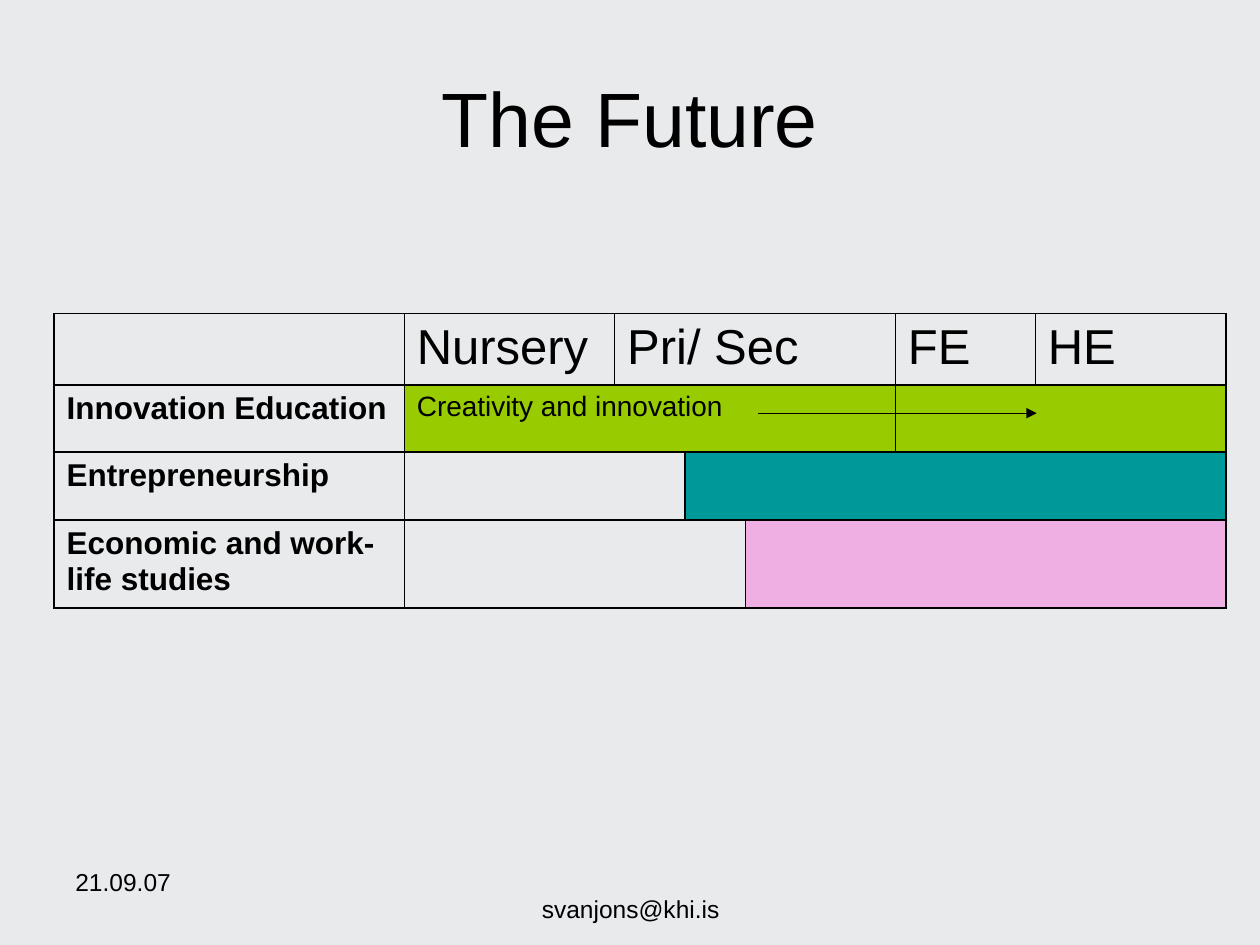
from lxml.etree import SubElement
from pptx import Presentation
from pptx.dml.color import RGBColor
from pptx.enum.shapes import MSO_CONNECTOR as CONN
from pptx.enum.text import MSO_ANCHOR as ANCHOR, PP_ALIGN as ALIGN
from pptx.oxml.ns import qn
from pptx.util import Cm, Pt


def rgb(value):
    return RGBColor.from_string(value)


def write(tf, text, size, bold=False, align=ALIGN.LEFT):
    tf.word_wrap = True
    p = tf.paragraphs[0]
    p.text = text
    p.alignment = align
    p.font.name = "Arial"
    p.font.size = Pt(size)
    p.font.bold = bold
    p.font.color.rgb = rgb("000000")


prs = Presentation()
prs.slide_width, prs.slide_height = Cm(25.4), Cm(19.05)
s = prs.slides.add_slide(prs.slide_layouts[6])
s.background.fill.solid()
s.background.fill.fore_color.rgb = rgb("E8EAEC")

texts = [
    ("21.09.07", 14, ALIGN.LEFT, ANCHOR.TOP, (1.27, 17.35, 5.92, 1.32)),
    ("svanjons@khi.is", 14, ALIGN.CENTER, ANCHOR.TOP, (8.69, 17.89, 8.05, 0.8)),
    ("The Future", 44, ALIGN.CENTER, ANCHOR.MIDDLE, (1.27, 0.76, 22.86, 3.18)),
]
for text, size, align, anchor, box in texts:
    tf = s.shapes.add_textbox(*map(Cm, box)).text_frame
    tf.vertical_anchor = anchor
    write(tf, text, size, align=align)

widths = [7.06, 4.24, 1.42, 1.22, 3.02, 2.82, 3.84]
heights = [1.4, 1.35, 1.37, 1.75]
table = s.shapes.add_table(
    len(heights), len(widths), Cm(1.09), Cm(6.32), Cm(sum(widths)), Cm(sum(heights))
).table
table.first_row = table.horz_banding = False
for column, width in zip(table.columns, widths):
    column.width = Cm(width)
for row, height in zip(table.rows, heights):
    row.height = Cm(height)

for cell in table.iter_cells():
    tcPr = cell._tc.get_or_add_tcPr()
    for side in ("a:lnL", "a:lnR", "a:lnT", "a:lnB"):
        ln = SubElement(tcPr, qn(side), w=str(Pt(1)))
        SubElement(SubElement(ln, qn("a:solidFill")), qn("a:srgbClr"), val="000000")
    cell.fill.background()

rows = [
    [("", 1, None), ("Nursery", 1, None), ("Pri/ Sec", 3, None), ("FE", 1, None), ("HE", 1, None)],
    [("Innovation Education", 1, None), ("Creativity and innovation", 4, "99CC00"), ("", 2, "99CC00")],
    [("Entrepreneurship", 1, None), ("", 2, None), ("", 4, "009999")],
    [("Economic and work-life studies", 1, None), ("", 3, None), ("", 3, "EFAFE3")],
]
for i, row in enumerate(rows):
    j = 0
    for text, span, color in row:
        cell = table.cell(i, j)
        if span > 1:
            cell.merge(table.cell(i, j + span - 1))
        if color:
            cell.fill.solid()
            cell.fill.fore_color.rgb = rgb(color)
        if text:
            size = 28 if i == 0 else 18 if j == 0 else 16
            write(cell.text_frame, text, size, bold=i > 0 and j == 0)
        j += span

arrow = s.shapes.add_connector(CONN.STRAIGHT, Cm(15.29), Cm(8.33), Cm(20.9), Cm(8.33))
arrow.line.color.rgb = rgb("000000")
arrow.line.width = Pt(0.75)
SubElement(arrow.line._get_or_add_ln(), qn("a:tailEnd"), type="triangle")
SubElement(arrow._element.spPr, qn("a:effectLst"))

prs.save("out.pptx")
